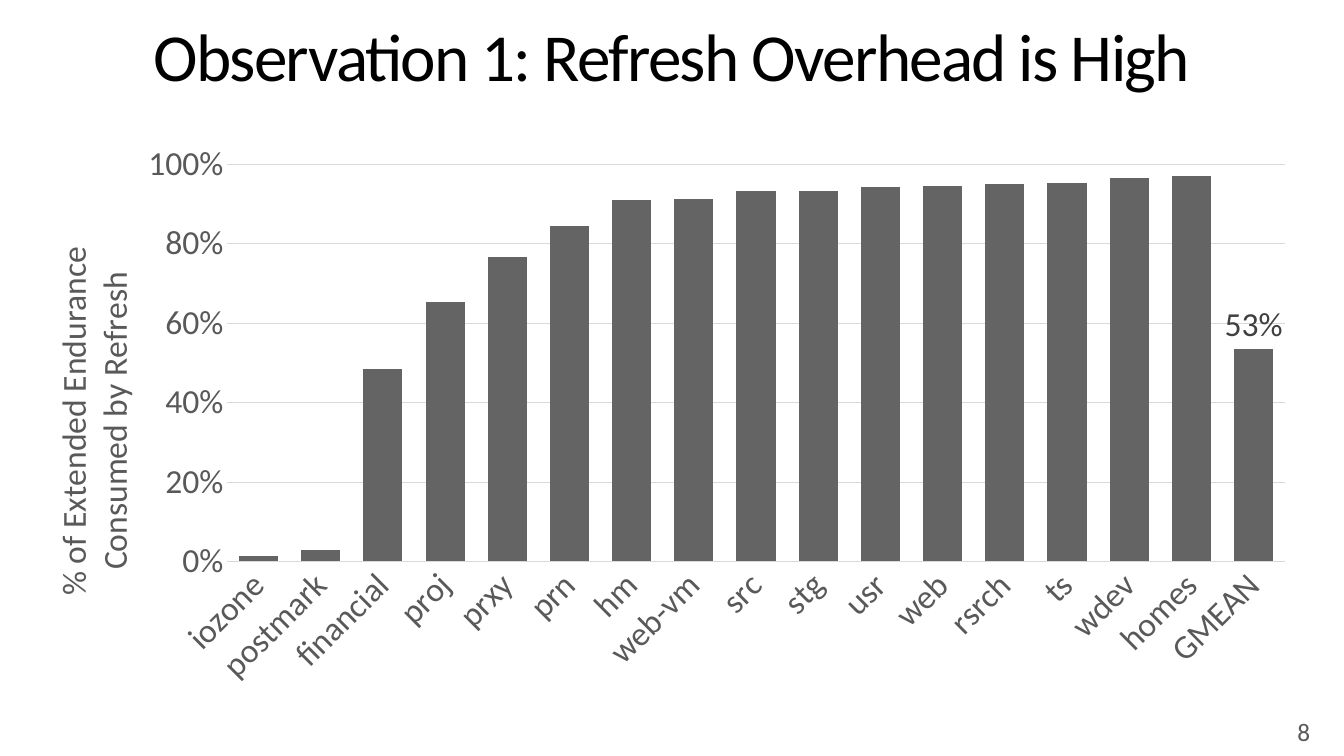
from dataclasses import dataclass

from lxml import etree
from pptx import Presentation
from pptx.chart.data import CategoryChartData
from pptx.dml.color import RGBColor
from pptx.enum.chart import XL_CHART_TYPE as ChartType
from pptx.enum.chart import XL_LABEL_POSITION as LabelPosition
from pptx.enum.chart import XL_TICK_MARK as TickMark
from pptx.enum.text import MSO_ANCHOR as Anchor
from pptx.enum.text import PP_ALIGN as Align
from pptx.oxml.ns import qn
from pptx.util import Cm, Pt


@dataclass(frozen=True)
class Theme:
    """Font, colours and type sizes of the deck."""
    font: str = "Calibri"
    black: RGBColor = RGBColor(0x00, 0x00, 0x00)
    label: RGBColor = RGBColor(0x40, 0x40, 0x40)
    gray: RGBColor = RGBColor(0x59, 0x59, 0x59)
    bar: RGBColor = RGBColor(0x64, 0x64, 0x64)
    grid: RGBColor = RGBColor(0xD9, 0xD9, 0xD9)
    title_size: Pt = Pt(48)
    chart_size: Pt = Pt(24)
    number_size: Pt = Pt(18)
    hairline: Pt = Pt(0.75)


THEME = Theme()
REFRESH_SHARE = {
    "iozone": 0.013, "postmark": 0.029, "financial": 0.484, "proj": 0.654,
    "prxy": 0.767, "prn": 0.844, "hm": 0.910, "web-vm": 0.913,
    "src": 0.934, "stg": 0.934, "usr": 0.943, "web": 0.947,
    "rsrch": 0.950, "ts": 0.954, "wdev": 0.966, "homes": 0.972,
    "GMEAN": 0.534,
}


def style_font(font, size, color):
    """Set the deck font with a size and a colour."""
    font.name = THEME.font
    font.size = size
    font.bold = False
    font.color.rgb = color


def style_line(line):
    """Draw a line as a light hairline."""
    line.color.rgb = THEME.grid
    line.width = THEME.hairline


def set_layout(element, index, **settings):
    """Give a chart part a manual layout as its child at index."""
    for old in element.findall(qn("c:layout")):
        element.remove(old)
    layout = etree.Element(qn("c:layout"))
    manual = etree.SubElement(layout, qn("c:manualLayout"))
    for name, value in settings.items():
        etree.SubElement(manual, qn(f"c:{name}")).set("val", str(value))
    element.insert(index, layout)


def add_title(page, text, left, top, width, height):
    """Fill and place the title placeholder."""
    title = page.shapes.title
    title.left, title.top, title.width, title.height = left, top, width, height
    title.text_frame.vertical_anchor = Anchor.MIDDLE
    para = title.text_frame.paragraphs[0]
    para.alignment = Align.CENTER
    para.line_spacing = 0.9
    span = para.add_run()
    span.text = text
    span.font._element.set("spc", "-120")
    style_font(para.font, THEME.title_size, THEME.black)


def add_page_number(page, text, left, top, width, height):
    """Place the page number at the right of its box."""
    box = page.shapes.add_textbox(left, top, width, height)
    frame = box.text_frame
    frame.word_wrap = True
    frame.vertical_anchor = Anchor.MIDDLE
    para = frame.paragraphs[0]
    para.text = text
    para.alignment = Align.RIGHT
    style_font(para.font, THEME.number_size, THEME.gray)


def style_category_axis(axis):
    """Slant the workload names below a light axis line."""
    axis.major_tick_mark = axis.minor_tick_mark = TickMark.NONE
    style_line(axis.format.line)
    style_font(axis.tick_labels.font, THEME.chart_size, THEME.gray)
    axis._element.txPr.bodyPr.set("rot", "-2700000")


def style_value_axis(axis, title):
    """Scale the axis in percent and give it gridlines and a title."""
    axis.minimum_scale, axis.maximum_scale, axis.major_unit = 0, 1, 0.2
    axis.major_tick_mark = axis.minor_tick_mark = TickMark.NONE
    axis.format.line.fill.background()
    style_line(axis.major_gridlines.format.line)
    axis.tick_labels.number_format = "0%"
    axis.tick_labels.number_format_is_linked = False
    style_font(axis.tick_labels.font, THEME.chart_size, THEME.gray)
    frame = axis.axis_title.text_frame
    frame._txBody.bodyPr.set("rot", "-5400000")
    frame._txBody.bodyPr.set("vert", "horz")
    para = frame.paragraphs[0]
    para.alignment = Align.CENTER
    para.add_run().text = title
    style_font(para.font, THEME.chart_size, THEME.gray)
    set_layout(axis.axis_title._element, 1,
               xMode="edge", yMode="edge", x=0.02, y=0.18)


def add_refresh_chart(page, left, top, width, height):
    """Draw the refresh share of each workload, with the mean labelled."""
    data = CategoryChartData(number_format="0%")
    data.categories = list(REFRESH_SHARE)
    data.add_series("Series 1", list(REFRESH_SHARE.values()))
    chart = page.shapes.add_chart(
        ChartType.COLUMN_CLUSTERED, left, top, width, height, data).chart
    chart.has_title = chart.has_legend = False
    style_font(chart.font, THEME.chart_size, THEME.black)
    style_category_axis(chart.category_axis)
    style_value_axis(chart.value_axis,
                     "% of Extended Endurance Consumed by Refresh")
    plot = chart.plots[0]
    plot.gap_width, plot.overlap = 59, -64
    plot.vary_by_categories = False
    set_layout(chart._chartSpace.chart.plotArea, 0, layoutTarget="inner",
               xMode="edge", yMode="edge", x=0.16, y=0.048, w=0.809, h=0.69)
    bars = plot.series[0]
    bars.format.fill.solid()
    bars.format.fill.fore_color.rgb = THEME.bar
    bars.data_labels.show_value = False
    mean_label = bars.points[len(REFRESH_SHARE) - 1].data_label
    style_font(mean_label.font, THEME.chart_size, THEME.label)
    mean_label.position = LabelPosition.OUTSIDE_END


def main():
    """Build the deck and save it."""
    deck = Presentation()
    deck.slide_width, deck.slide_height = Cm(33.87), Cm(19.05)
    page = deck.slides.add_slide(deck.slide_layouts[5])
    add_title(page, "Observation 1: Refresh Overhead is High",
              Cm(0), Cm(0), deck.slide_width, Cm(3.02))
    add_refresh_chart(page, Cm(0.46), Cm(3.45), Cm(32.94), Cm(14.5))
    add_page_number(page, "8", Cm(25.65), Cm(17.93), Cm(7.62), Cm(1.02))
    deck.save("out.pptx")


if __name__ == "__main__":
    main()
